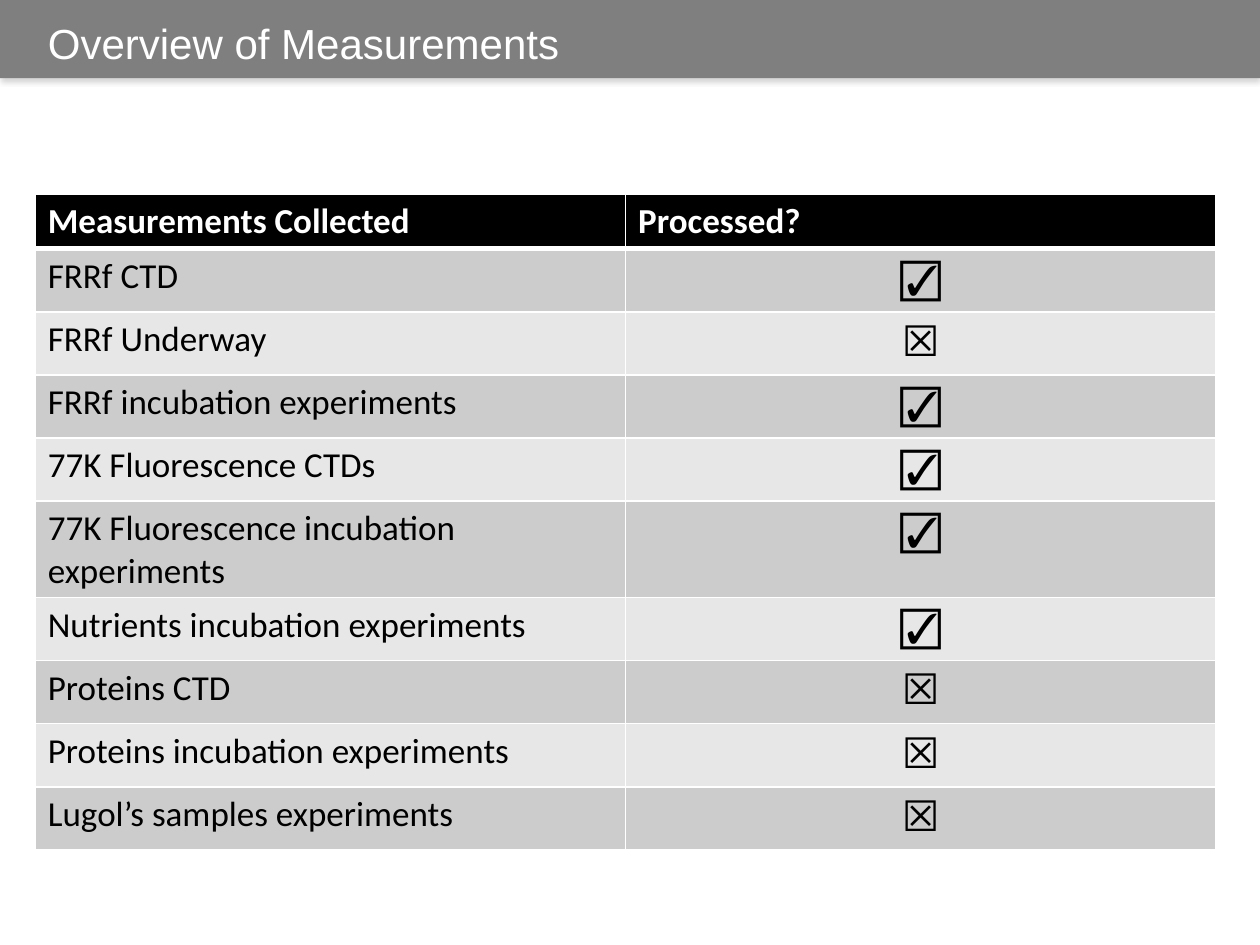
import pptx
import pptx.dml.color
import pptx.enum.shapes
import pptx.enum.text
import pptx.oxml
import pptx.oxml.ns
import pptx.util

COLORS = {"bar": "7F7F7F", "shadow": "808080", "white": "FFFFFF", "black": "000000",
          "odd": "CCCCCC", "even": "E7E7E7"}
ALIGN = pptx.enum.text.PP_ALIGN
NS = pptx.oxml.ns.nsdecls("a")

MEASUREMENTS = [
    ("FRRf CTD", True),
    ("FRRf Underway", False),
    ("FRRf incubation experiments", True),
    ("77K Fluorescence CTDs", True),
    ("77K Fluorescence incubation experiments", True),
    ("Nutrients incubation experiments", True),
    ("Proteins CTD", False),
    ("Proteins incubation experiments", False),
    ("Lugol’s samples experiments", False),
]


def rgb(name):
    return pptx.dml.color.RGBColor.from_string(COLORS[name])


class Deck:
    heading_font = "Arial"
    body_font = "Calibri"

    def __init__(self, width, height):
        self.prs = pptx.Presentation()
        self.prs.slide_width = pptx.util.Inches(width)
        self.prs.slide_height = pptx.util.Inches(height)
        self.slide = None

    def add_slide(self):
        self.slide = self.prs.slides.add_slide(self.prs.slide_layouts[5])

    def box(self, x, y, w, h):
        width, height = self.prs.slide_width, self.prs.slide_height
        return int(x * width), int(y * height), int(w * width), int(h * height)

    def set_text(self, tf, text, size, font, color, bold=False, align=ALIGN.LEFT):
        tf.text = text
        p = tf.paragraphs[0]
        p.alignment = align
        r = p.runs[0]
        r.font.size = pptx.util.Pt(size)
        r.font.name = font
        r.font.bold = bold
        r.font.color.rgb = rgb(color)

    def bar(self, height):
        sp = self.slide.shapes.add_shape(
            pptx.enum.shapes.MSO_SHAPE.RECTANGLE, *self.box(0, 0, 1, height))
        sp.fill.solid()
        sp.fill.fore_color.rgb = rgb("bar")
        sp.line.fill.background()
        sp.shadow.inherit = False
        effects = sp._element.spPr.find(pptx.oxml.ns.qn("a:effectLst"))
        effects.append(pptx.oxml.parse_xml(
            f'<a:outerShdw {NS} blurRad="40000" dist="23000" dir="5400000" rotWithShape="0">'
            f'<a:srgbClr val="{COLORS["shadow"]}"><a:alpha val="35000"/></a:srgbClr>'
            '</a:outerShdw>'))
        self.slide.shapes._spTree.insert(2, sp._element)

    def title(self, text, *place):
        sp = self.slide.shapes.title
        sp.left, sp.top, sp.width, sp.height = self.box(*place)
        tf = sp.text_frame
        tf.word_wrap = True
        tf.auto_size = pptx.enum.text.MSO_AUTO_SIZE.SHAPE_TO_FIT_TEXT
        tf.vertical_anchor = pptx.enum.text.MSO_ANCHOR.TOP
        self.set_text(tf, text, 24, self.heading_font, "white")

    def cell(self, cell, fill, top=1, bottom=1):
        tcPr = cell._tc.get_or_add_tcPr()
        for side, width in (("L", 1), ("R", 1), ("T", top), ("B", bottom)):
            tcPr.append(pptx.oxml.parse_xml(
                f'<a:ln{side} {NS} w="{pptx.util.Pt(width)}"><a:solidFill>'
                f'<a:srgbClr val="{COLORS["white"]}"/></a:solidFill></a:ln{side}>'))
        cell.fill.solid()
        cell.fill.fore_color.rgb = rgb(fill)

    def checklist(self, headers, items, *place):
        table = self.slide.shapes.add_table(
            len(items) + 1, len(headers), *self.box(*place)).table
        for cell, text in zip(table.rows[0].cells, headers):
            self.cell(cell, "black", bottom=3)
            self.set_text(cell.text_frame, text, 20, self.body_font, "white", bold=True)
        for i, (name, done) in enumerate(items, 1):
            label, mark = table.rows[i].cells
            for cell in (label, mark):
                self.cell(cell, "odd" if i % 2 else "even", top=3 if i == 1 else 1)
            self.set_text(label.text_frame, name, 20, self.body_font, "black")
            self.set_text(mark.text_frame, "☑" if done else "☒", 24,
                          self.heading_font, "black", align=ALIGN.CENTER)


def main():
    deck = Deck(10, 7.5)
    deck.add_slide()
    deck.bar(0.62 / 7.5)
    deck.title("Overview of Measurements", 0.028, 0.09 / 7.5, 0.616, 0.5 / 7.5)
    deck.checklist(("Measurements Collected", "Processed?"), MEASUREMENTS,
                   0.028, 1.54 / 7.5, 0.937, 4.1 / 7.5)
    deck.prs.save("out.pptx")


if __name__ == "__main__":
    main()
